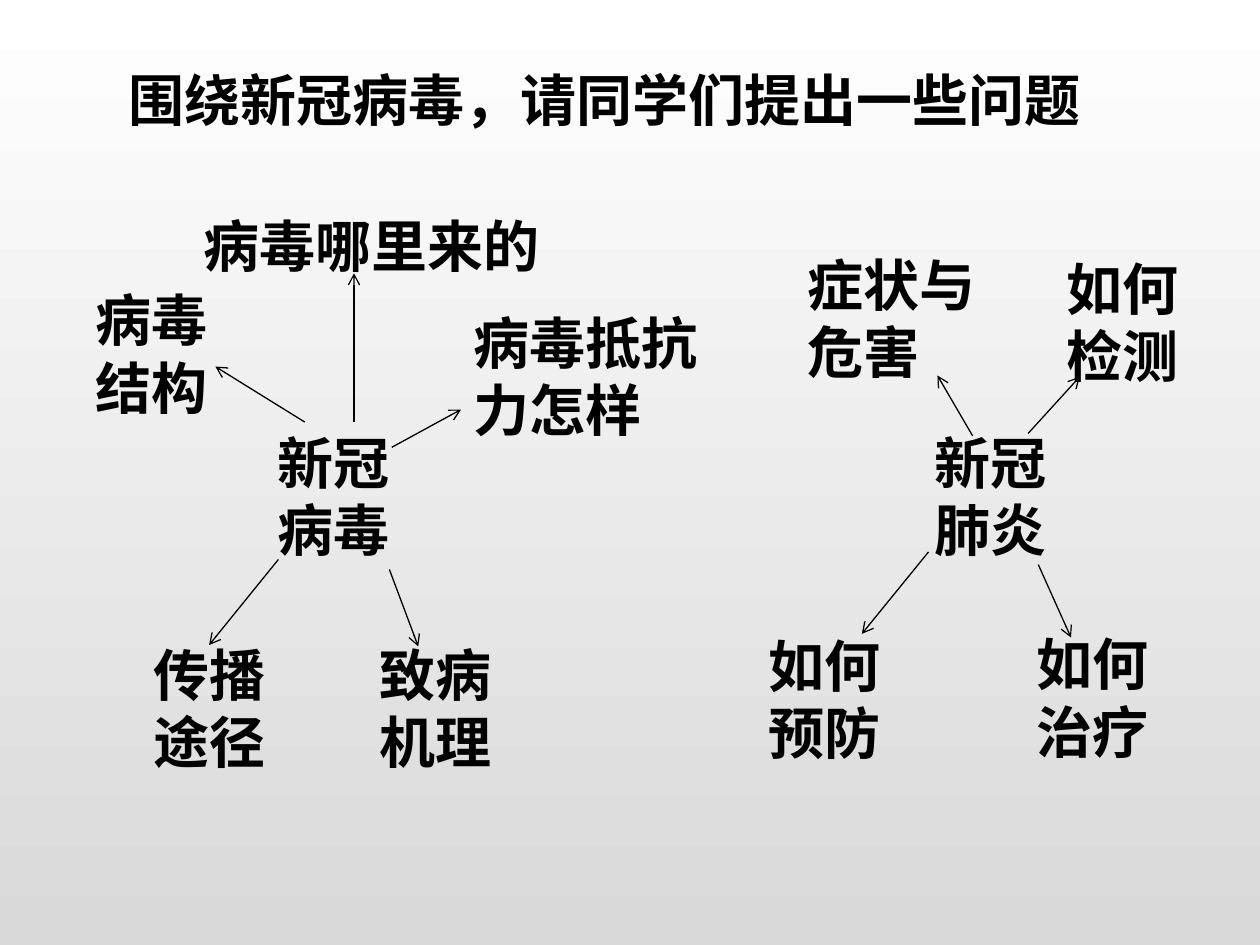
from typing import NamedTuple

from lxml.etree import SubElement
from pptx import Presentation
from pptx.dml.color import RGBColor
from pptx.enum.shapes import MSO_CONNECTOR
from pptx.enum.text import MSO_AUTO_SIZE
from pptx.oxml.ns import qn
from pptx.slide import Slide
from pptx.util import Pt

BLACK = RGBColor(0x00, 0x00, 0x00)
WHITE = RGBColor(0xFF, 0xFF, 0xFF)
GREY = RGBColor(0xD9, 0xD9, 0xD9)
ONE_LINE = 46
TWO_LINES = 85
TWO_CHARACTERS = 103.5


class Label(NamedTuple):
    """A bold text at a place on the slide, in points."""

    text: str
    left: float
    top: float
    width: float = TWO_CHARACTERS
    height: float = TWO_LINES


class Arrow(NamedTuple):
    """A line from a topic to one of its questions, in points."""

    start_x: float
    start_y: float
    end_x: float
    end_y: float


LABELS = [
    Label("围绕新冠病毒，请同学们提出一些问题", 66.2, 33.8, 565.2, ONE_LINE),
    Label("新冠病毒", 151.2, 241.2),
    Label("病毒结构", 47.5, 159.8),
    Label("病毒哪里来的", 109.4, 117.4, 234, ONE_LINE),
    Label("病毒抵抗力怎样", 263.5, 172.8, 146.2),
    Label("传播途径", 80.6, 362.2),
    Label("致病机理", 209.5, 362.2),
    Label("新冠肺炎", 527, 241.2),
    Label("症状与危害", 454.3, 139.7, 124.6),
    Label("如何检测", 602.6, 141.8),
    Label("如何预防", 432, 357.1),
    Label("如何治疗", 585.4, 356.4),
]

ARROWS = [
    Arrow(174.2, 241.2, 123.1, 209.5),
    Arrow(202.3, 241.2, 202.3, 156.2),
    Arrow(223.9, 255.6, 263.5, 234),
    Arrow(159.1, 319.7, 119.5, 368.6),
    Arrow(222.5, 325.4, 239, 369.4),
    Arrow(555.8, 249.1, 535.7, 214.6),
    Arrow(587.5, 247.7, 617, 215.3),
    Arrow(530.6, 315.4, 492.5, 362.2),
    Arrow(593.3, 322.6, 612, 364.3),
]


def paint_background(slide: Slide) -> None:
    """Fill the slide with a gradient from white down to grey."""
    fill = slide.background.fill
    fill.gradient()
    fill.gradient_angle = 270
    for stop, color in zip(fill.gradient_stops, (WHITE, GREY)):
        stop.color.rgb = color


def draw_label(slide: Slide, label: Label) -> None:
    """Write one label in a wrapping text box."""
    box = slide.shapes.add_textbox(
        Pt(label.left), Pt(label.top), Pt(label.width), Pt(label.height)
    )
    frame = box.text_frame
    frame.word_wrap = True
    frame.auto_size = MSO_AUTO_SIZE.SHAPE_TO_FIT_TEXT
    paragraph = frame.paragraphs[0]
    paragraph.text = label.text
    font = paragraph.font
    font.name = "Arial"
    font.size = Pt(32)
    font.bold = True
    font.color.rgb = BLACK


def draw_arrow(slide: Slide, arrow: Arrow) -> None:
    """Draw one thin line with an open arrowhead at its end."""
    connector = slide.shapes.add_connector(
        MSO_CONNECTOR.STRAIGHT, *(Pt(value) for value in arrow)
    )
    line = connector.line
    line.color.rgb = BLACK
    line.width = Pt(0.75)
    properties = connector.element.spPr
    SubElement(properties.find(qn("a:ln")), qn("a:tailEnd"), type="arrow")
    SubElement(properties, qn("a:effectLst"))


def main() -> None:
    """Build the slide and save it."""
    presentation = Presentation()
    presentation.slide_width = Pt(720)
    presentation.slide_height = Pt(540)
    slide = presentation.slides.add_slide(presentation.slide_layouts[6])
    paint_background(slide)
    for label in LABELS:
        draw_label(slide, label)
    for arrow in ARROWS:
        draw_arrow(slide, arrow)
    presentation.save("out.pptx")


if __name__ == "__main__":
    main()
